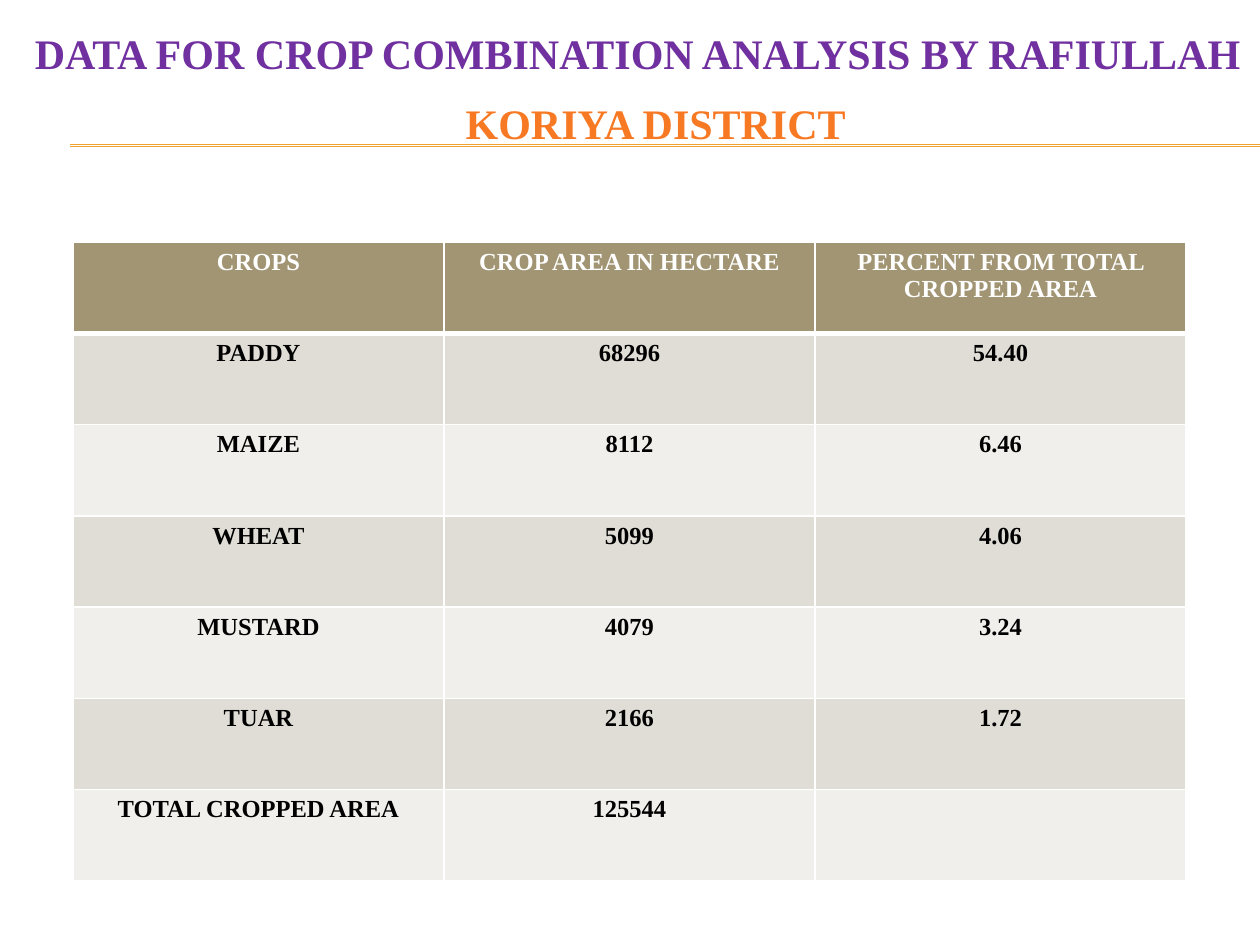
from dataclasses import dataclass

from lxml.etree import SubElement
from pptx import Presentation
from pptx.dml.color import RGBColor
from pptx.enum.shapes import MSO_CONNECTOR
from pptx.enum.text import MSO_AUTO_SIZE, PP_ALIGN
from pptx.oxml import parse_xml
from pptx.oxml.ns import nsdecls, qn
from pptx.util import Cm, Pt

FONT = "Times New Roman"
WHITE = "FFFFFF"
HEADER_FILL = "A19574"
BAND_FILLS = ("E0DDD6", "F0EFEB")
PAGE_WIDTH = 25.4
COLUMN_WIDTH = 7.48
ROW_HEIGHT = 1.84


@dataclass
class Heading:
    text: str
    left: float
    top: float
    width: float
    height: float
    color: str


@dataclass
class CropRow:
    crop: str
    area: str
    percent: str

    def values(self) -> tuple[str, str, str]:
        return self.crop, self.area, self.percent


HEADINGS = (
    Heading("DATA FOR CROP COMBINATION ANALYSIS BY RAFIULLAH", 0.41, 0.43, 24.89, 2.31, "7030A0"),
    Heading("KORIYA DISTRICT", 9.09, 1.85, 8.26, 1.27, "F87924"),
)
CROP_ROWS = (
    CropRow("CROPS", "CROP AREA IN HECTARE", "PERCENT FROM TOTAL CROPPED AREA"),
    CropRow("PADDY", "68296", "54.40"),
    CropRow("MAIZE", "8112", "6.46"),
    CropRow("WHEAT", "5099", "4.06"),
    CropRow("MUSTARD", "4079", "3.24"),
    CropRow("TUAR", "2166", "1.72"),
    CropRow("TOTAL CROPPED AREA", "125544", ""),
)
RULE_TOPS = (2.92, 2.95)


def rgb(value: str) -> RGBColor:
    return RGBColor.from_string(value)


def add_span(para, text: str, size: float, color: str) -> None:
    para.alignment = PP_ALIGN.CENTER
    span = para.add_run()
    span.text = text
    span.font.name = FONT
    span.font.size = Pt(size)
    span.font.bold = True
    span.font.color.rgb = rgb(color)


def add_rule(page, top: float) -> None:
    rule = page.shapes.add_connector(
        MSO_CONNECTOR.STRAIGHT, Cm(1.42), Cm(top), Cm(PAGE_WIDTH), Cm(top)
    )
    rule.line.color.rgb = rgb("F0A22E")
    rule.line.width = Pt(0.75)
    SubElement(rule._element.spPr, qn("a:effectLst"))


def add_heading(page, heading: Heading) -> None:
    box = page.shapes.add_textbox(
        Cm(heading.left), Cm(heading.top), Cm(heading.width), Cm(heading.height)
    )
    frame = box.text_frame
    frame.word_wrap = False
    frame.auto_size = MSO_AUTO_SIZE.NONE
    add_span(frame.paragraphs[0], heading.text, 24, heading.color)


def add_borders(cell, bottom_width: float) -> None:
    properties = cell._tc.get_or_add_tcPr()
    widths = {"lnL": 1, "lnR": 1, "lnT": 1, "lnB": bottom_width}
    for position, (side, width) in enumerate(widths.items()):
        border = parse_xml(
            f'<a:{side} {nsdecls("a")} w="{Pt(width)}"><a:solidFill>'
            f'<a:srgbClr val="{WHITE}"/></a:solidFill></a:{side}>'
        )
        properties.insert(position, border)


def add_crop_table(page, rows: tuple[CropRow, ...]) -> None:
    column_count = len(rows[0].values())
    table = page.shapes.add_table(
        len(rows), column_count, Cm(1.47), Cm(4.88),
        Cm(COLUMN_WIDTH * column_count), Cm(ROW_HEIGHT * len(rows)),
    ).table
    for column in table.columns:
        column.width = Cm(COLUMN_WIDTH)
    for row_index, crop_row in enumerate(rows):
        table.rows[row_index].height = Cm(ROW_HEIGHT)
        is_header = row_index == 0
        fill = HEADER_FILL if is_header else BAND_FILLS[(row_index - 1) % 2]
        for column_index, text in enumerate(crop_row.values()):
            cell = table.cell(row_index, column_index)
            cell.fill.solid()
            cell.fill.fore_color.rgb = rgb(fill)
            add_borders(cell, 3 if is_header else 1)
            if text:
                add_span(cell.text_frame.paragraphs[0], text, 14, WHITE if is_header else "000000")


def main() -> None:
    deck = Presentation()
    deck.slide_width = Cm(PAGE_WIDTH)
    deck.slide_height = Cm(19.05)
    page = deck.slides.add_slide(deck.slide_layouts[6])
    for top in RULE_TOPS:
        add_rule(page, top)
    add_crop_table(page, CROP_ROWS)
    for heading in HEADINGS:
        add_heading(page, heading)
    deck.save("out.pptx")


if __name__ == "__main__":
    main()
